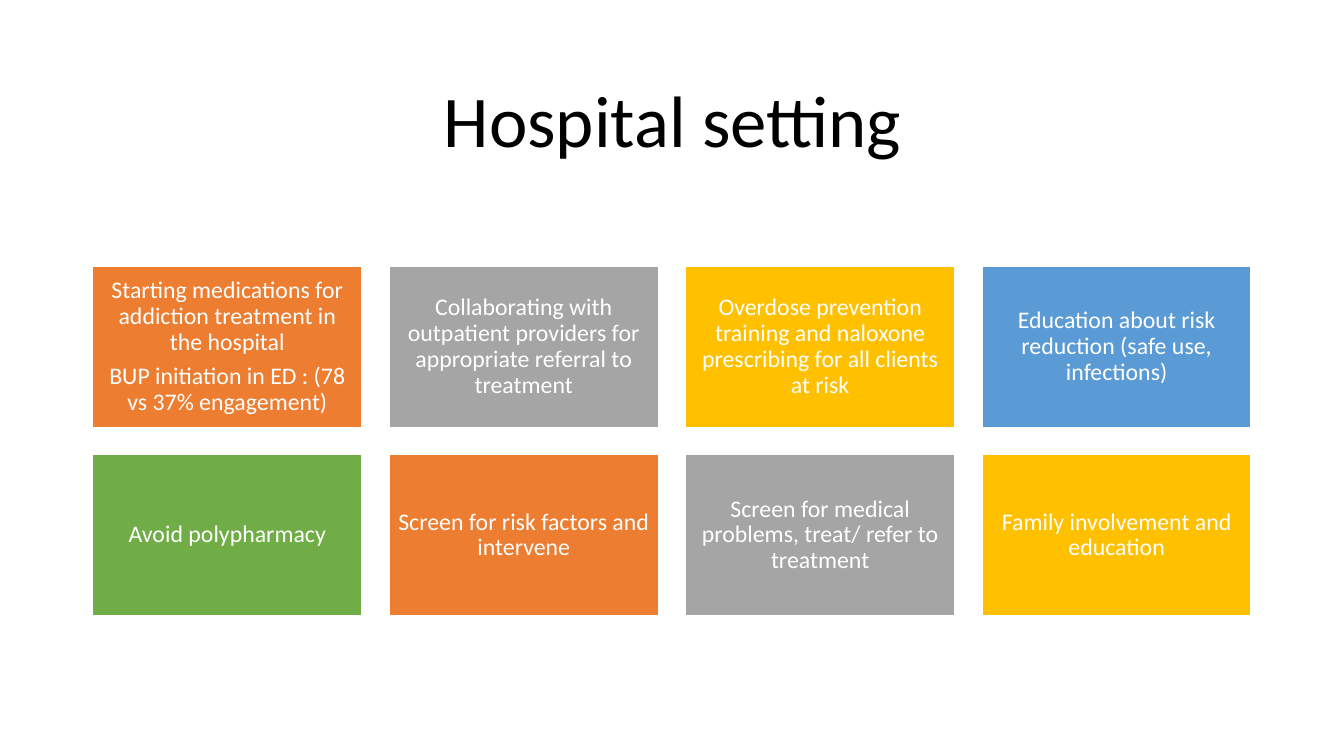
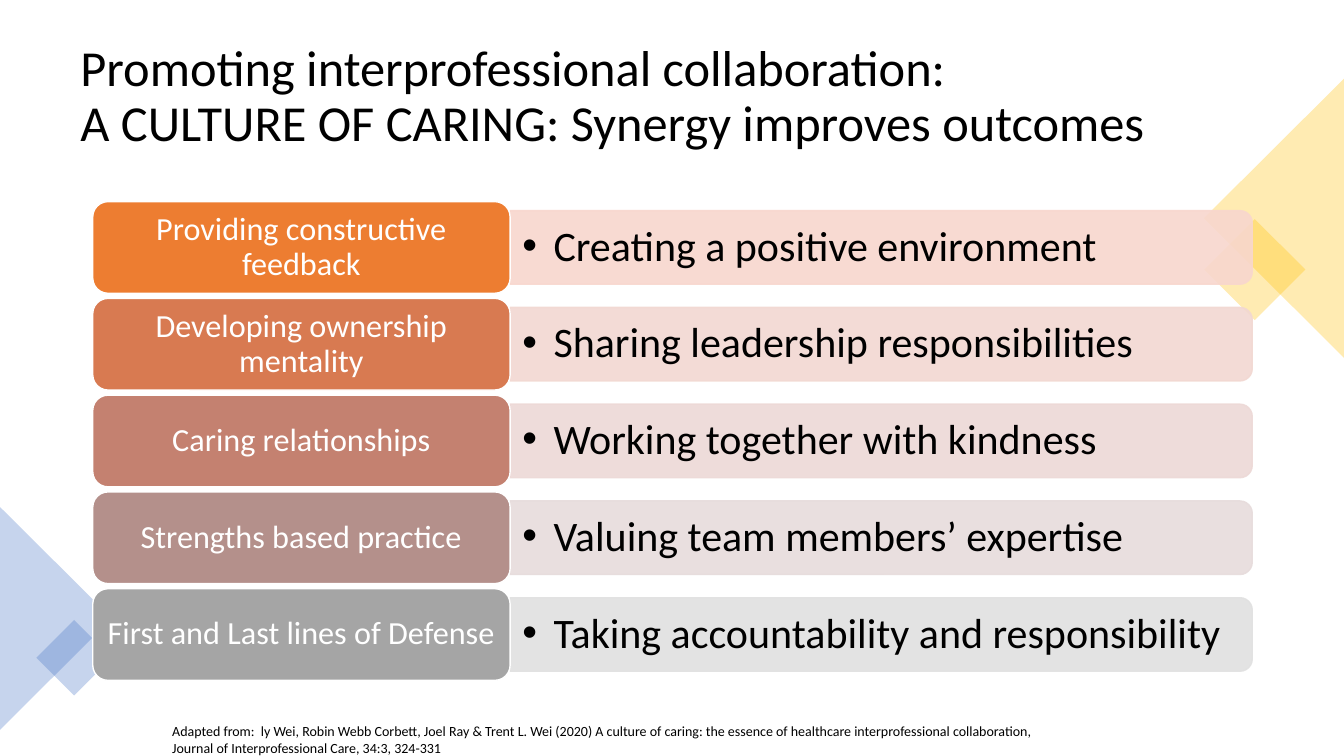
"""Build two slides: hospital setting tiles and interprofessional collaboration."""
from lxml.etree import SubElement
from pptx import Presentation
from pptx.dml.color import RGBColor
from pptx.enum.shapes import MSO_SHAPE as Shape
from pptx.enum.text import MSO_ANCHOR as Anchor, PP_ALIGN as Align
from pptx.oxml.ns import qn
from pptx.util import Inches, Pt

FONT = "Calibri"
BLACK = RGBColor(0x00, 0x00, 0x00)
WHITE = RGBColor(0xFF, 0xFF, 0xFF)
ORANGE = RGBColor(0xED, 0x7D, 0x31)
GRAY = RGBColor(0xA5, 0xA5, 0xA5)
GOLD = RGBColor(0xFF, 0xC0, 0x00)
SKY = RGBColor(0x5B, 0x9B, 0xD5)
GREEN = RGBColor(0x70, 0xAD, 0x47)
BLUE = RGBColor(0x44, 0x72, 0xC4)
TERRACOTTA = RGBColor(0xD8, 0x7A, 0x51)
CLAY = RGBColor(0xC4, 0x81, 0x70)
MAUVE = RGBColor(0xB4, 0x90, 0x8B)
PALE_ORANGE = RGBColor(0xF8, 0xD7, 0xCE)
PALE_TERRACOTTA = RGBColor(0xF2, 0xD8, 0xD2)
PALE_CLAY = RGBColor(0xED, 0xD9, 0xD7)
PALE_MAUVE = RGBColor(0xE7, 0xDC, 0xDC)
PALE_GRAY = RGBColor(0xE1, 0xE1, 0xE1)

LEFT = 0.92
TILE_COLORS = [ORANGE, GRAY, GOLD, SKY, GREEN]
TILES = [
    ["Starting medications for addiction treatment in the hospital",
     "BUP initiation in ED : (78 vs 37% engagement)"],
    ["Collaborating with outpatient providers for appropriate referral to treatment"],
    ["Overdose prevention training and naloxone prescribing for all clients at risk"],
    ["Education about risk reduction (safe use, infections)"],
    ["Avoid polypharmacy"],
    ["Screen for risk factors and intervene"],
    ["Screen for medical problems, treat/ refer to treatment"],
    ["Family involvement and education"],
]
PRACTICES = [
    ("Providing constructive feedback", "Creating a positive environment",
     ORANGE, PALE_ORANGE),
    ("Developing ownership mentality", "Sharing leadership responsibilities",
     TERRACOTTA, PALE_TERRACOTTA),
    ("Caring relationships", "Working together with kindness", CLAY, PALE_CLAY),
    ("Strengths based practice", "Valuing team members’ expertise",
     MAUVE, PALE_MAUVE),
    ("First and Last lines of Defense", "Taking accountability and responsibility",
     GRAY, PALE_GRAY),
]
DECORATIONS = [
    (Shape.RECTANGLE, (12.09, 2.32, 0.71, 0.71), 45, GOLD),
    (Shape.ISOSCELES_TRIANGLE, (11.25, 1.47, 2.77, 1.39), 270, GOLD),
    (Shape.ISOSCELES_TRIANGLE, (-0.55, 5.58, 2.21, 1.11), 90, BLUE),
    (Shape.RECTANGLE, (0.47, 6.26, 0.53, 0.53), 45, BLUE),
]
CITATION = (
    "Adapted from:  ly Wei, Robin Webb Corbett, Joel Ray & Trent L. Wei (2020) "
    "A culture of caring: the essence of healthcare interprofessional collaboration, "
    "Journal of Interprofessional Care, 34:3, 324-331"
)


def add_bullet(para, indent):
    """Give a paragraph a hanging round bullet."""
    props = para._p.get_or_add_pPr()
    props.set("marL", str(Inches(indent)))
    props.set("indent", str(-Inches(indent)))
    SubElement(props, qn("a:buFont"), typeface="Arial")
    SubElement(props, qn("a:buChar"), char="•")


def write_text(shape, texts, size, color=BLACK, align=Align.LEFT, anchor=Anchor.MIDDLE,
               insets=(0.1, 0.05), spacing=0.9, after=0, bullet_indent=None):
    """Fill a shape with formatted paragraphs."""
    frame = shape.text_frame
    frame.word_wrap = True
    frame.vertical_anchor = anchor
    frame.margin_left = frame.margin_right = Inches(insets[0])
    frame.margin_top = frame.margin_bottom = Inches(insets[1])
    for index, text in enumerate(texts):
        para = frame.add_paragraph() if index else frame.paragraphs[0]
        para.text = text
        para.alignment = align
        para.line_spacing = spacing
        para.space_after = Pt(after)
        if bullet_indent:
            add_bullet(para, bullet_indent)
        for span in para.runs:
            span.font.name = FONT
            span.font.size = Pt(size)
            span.font.color.rgb = color


def add_text(page, box, texts, **style):
    """Add a text box at a place given in inches."""
    shape = page.shapes.add_textbox(*map(Inches, box))
    write_text(shape, texts, **style)


def add_block(page, kind, box, fill, line=None, opacity=100, rotation=0):
    """Add a filled preset shape, optionally outlined, rotated or see-through."""
    shape = page.shapes.add_shape(kind, *map(Inches, box))
    shape.shadow.inherit = False
    shape.rotation = rotation
    shape.fill.solid()
    shape.fill.fore_color.rgb = fill
    if line is None:
        shape.line.fill.background()
    else:
        shape.line.color.rgb = line
        shape.line.width = Pt(1)
    if opacity < 100:
        for color in shape.element.spPr.iter(qn("a:srgbClr")):
            SubElement(color, qn("a:alpha"), val=str(opacity * 1000))
    return shape


def add_tile_grid(page):
    """Lay the tiles out in rows of four."""
    columns, width, height, gap = 4, 2.67, 1.6, 0.27
    for index, texts in enumerate(TILES):
        row, column = divmod(index, columns)
        box = (LEFT + column * (width + gap), 2.64 + row * (height + gap), width, height)
        fill = TILE_COLORS[index % len(TILE_COLORS)]
        tile = add_block(page, Shape.RECTANGLE, box, fill, line=WHITE)
        write_text(tile, texts, size=17, color=WHITE, align=Align.CENTER,
                   insets=(0.07, 0.07), after=6)


def add_practice(page, top, label, detail, fill, pale):
    """Add a label and the pale band that continues it to the right."""
    label_width, label_height = 4.14, 0.91
    band_length, band_height = 7.36, 0.73
    band_left = LEFT + label_width
    middle = top + label_height / 2
    band_box = (band_left + (band_length - band_height) / 2, middle - band_length / 2,
                band_height, band_length)
    add_block(page, Shape.ROUND_2_SAME_RECTANGLE, band_box, pale, line=pale,
              opacity=90, rotation=90)
    add_text(page, (band_left, middle - 0.33, 7.32, 0.66), [detail], size=30,
             insets=(0.12, 0.06), after=4.5, bullet_indent=0.31)
    block = add_block(page, Shape.ROUNDED_RECTANGLE,
                      (LEFT, top, label_width, label_height), fill, line=WHITE)
    write_text(block, [label], size=23, color=WHITE, align=Align.CENTER, after=8)


def build_hospital(page):
    """Build the hospital setting slide."""
    add_text(page, (LEFT, 0.61, 11.5, 1.24), ["Hospital setting"], size=52,
             align=Align.CENTER)
    add_tile_grid(page)


def build_collaboration(page):
    """Build the interprofessional collaboration slide."""
    title = ("Promoting interprofessional collaboration:\v"
             "A CULTURE OF CARING: Synergy improves outcomes")
    add_text(page, (0.7, 0.35, 11.93, 1.24), [title], size=36)
    for kind, box, rotation, fill in DECORATIONS:
        add_block(page, kind, box, fill, opacity=30, rotation=rotation)
    for index, practice in enumerate(PRACTICES):
        add_practice(page, 2 + index * 0.96, *practice)
    add_text(page, (1.61, 7.12, 9.07, 0.44), [CITATION], size=10,
             anchor=Anchor.TOP, spacing=1.0)


def main():
    """Create and save the deck."""
    deck = Presentation()
    deck.slide_width = Inches(13.33)
    deck.slide_height = Inches(7.5)
    for build in (build_hospital, build_collaboration):
        build(deck.slides.add_slide(deck.slide_layouts[6]))
    deck.save("out.pptx")


if __name__ == "__main__":
    main()
